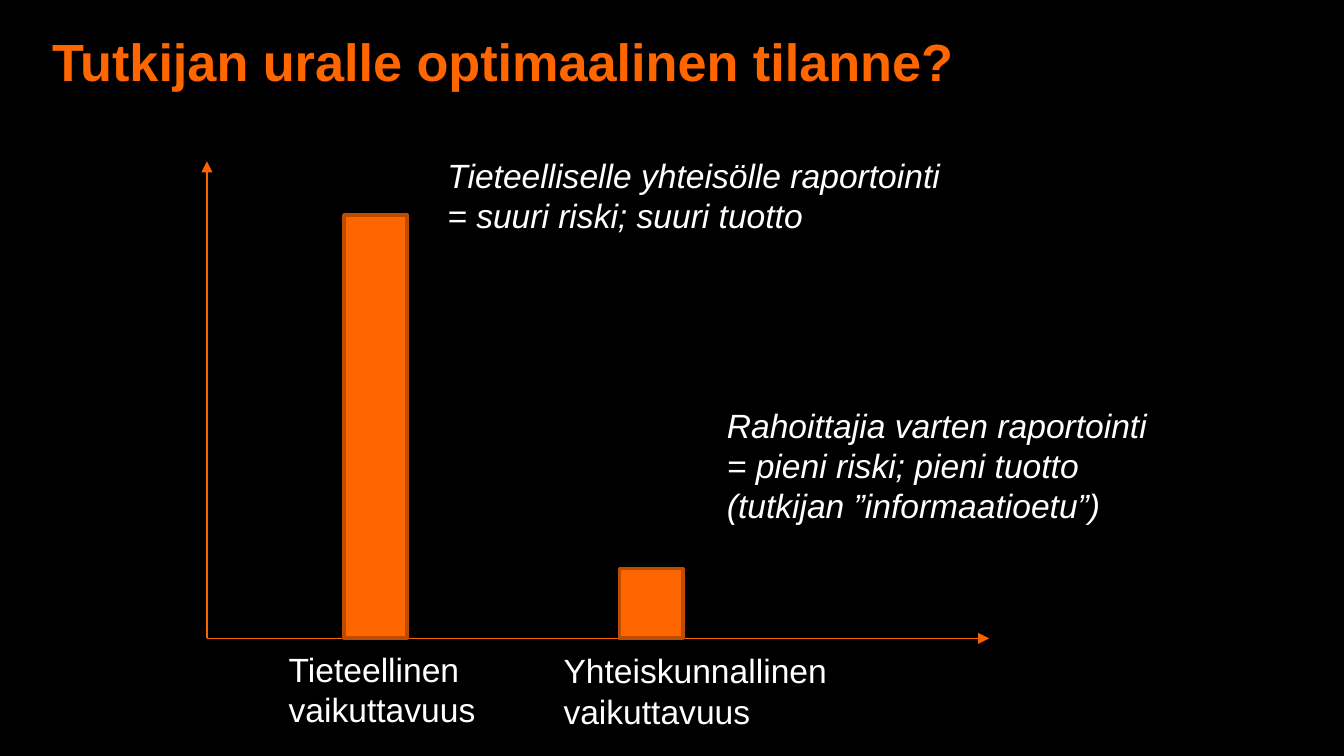
from lxml.etree import SubElement
from pptx import Presentation
from pptx.dml.color import RGBColor
from pptx.enum.shapes import MSO_CONNECTOR, MSO_SHAPE
from pptx.enum.text import MSO_ANCHOR
from pptx.oxml.ns import qn
from pptx.util import Pt

SCALE = 4572
WHITE, ORANGE, AXIS, EDGE = "FFFFFF", "FF6600", "F96400", "BD4B00"


def px(*values):
    return [value * SCALE for value in values]


def color(value):
    return RGBColor.from_string(value)


def write(frame, text, size=18, fill=WHITE, bold=False, italic=False, anchor=MSO_ANCHOR.TOP):
    frame.word_wrap = True
    frame.vertical_anchor = anchor
    frame.text = text
    for para in frame.paragraphs:
        font = para.font
        font.name, font.size = "Arial", Pt(size)
        font.bold, font.italic = bold, italic
        font.color.rgb = color(fill)


class Canvas:
    def __init__(self, slide, back):
        self.shapes = slide.shapes
        fill = slide.background.fill
        fill.solid()
        fill.fore_color.rgb = color(back)

    def text(self, box, text, **style):
        write(self.shapes.add_textbox(*px(*box)).text_frame, text, **style)

    def arrow(self, start, end):
        line = self.shapes.add_connector(MSO_CONNECTOR.STRAIGHT, *px(*start, *end))
        line.line.color.rgb = color(AXIS)
        line.line.width = Pt(0.75)
        SubElement(line.line._get_or_add_ln(), qn("a:tailEnd"), type="triangle")
        SubElement(line._element.spPr, qn("a:effectLst"))

    def bar(self, left, base, width, height):
        box = px(left, base - height, width, height)
        bar = self.shapes.add_shape(MSO_SHAPE.RECTANGLE, *box)
        bar.shadow.inherit = False
        bar.fill.solid()
        bar.fill.fore_color.rgb = color(ORANGE)
        bar.line.color.rgb = color(EDGE)
        bar.line.width = Pt(2)


def main():
    deck = Presentation()
    deck.slide_width, deck.slide_height = px(2000, 1125)
    canvas = Canvas(deck.slides.add_slide(deck.slide_layouts[6]), "000000")

    canvas.text((58, 12, 1590, 156), "Tutkijan uralle optimaalinen tilanne?",
                size=28, fill=ORANGE, bold=True, anchor=MSO_ANCHOR.MIDDLE)

    left, base = 308, 950
    for end in ((left, 240), (1472, base)):
        canvas.arrow((left, base), end)
    for start, height in ((512, 630), (922, 104)):
        canvas.bar(start, base, 94, height)

    canvas.text((410, 956, 394, 142), "Tieteellinen vaikuttavuus")
    canvas.text((819, 958, 480, 142), "Yhteiskunnallinen vaikuttavuus")
    canvas.text((646, 220, 818, 142),
                "Tieteelliselle yhteisölle raportointi\n= suuri riski; suuri tuotto",
                italic=True)
    canvas.text((1062, 592, 670, 202),
                "Rahoittajia varten raportointi\n= pieni riski; pieni tuotto\n"
                "(tutkijan ”informaatioetu”)", italic=True)
    deck.save("out.pptx")


if __name__ == "__main__":
    main()
